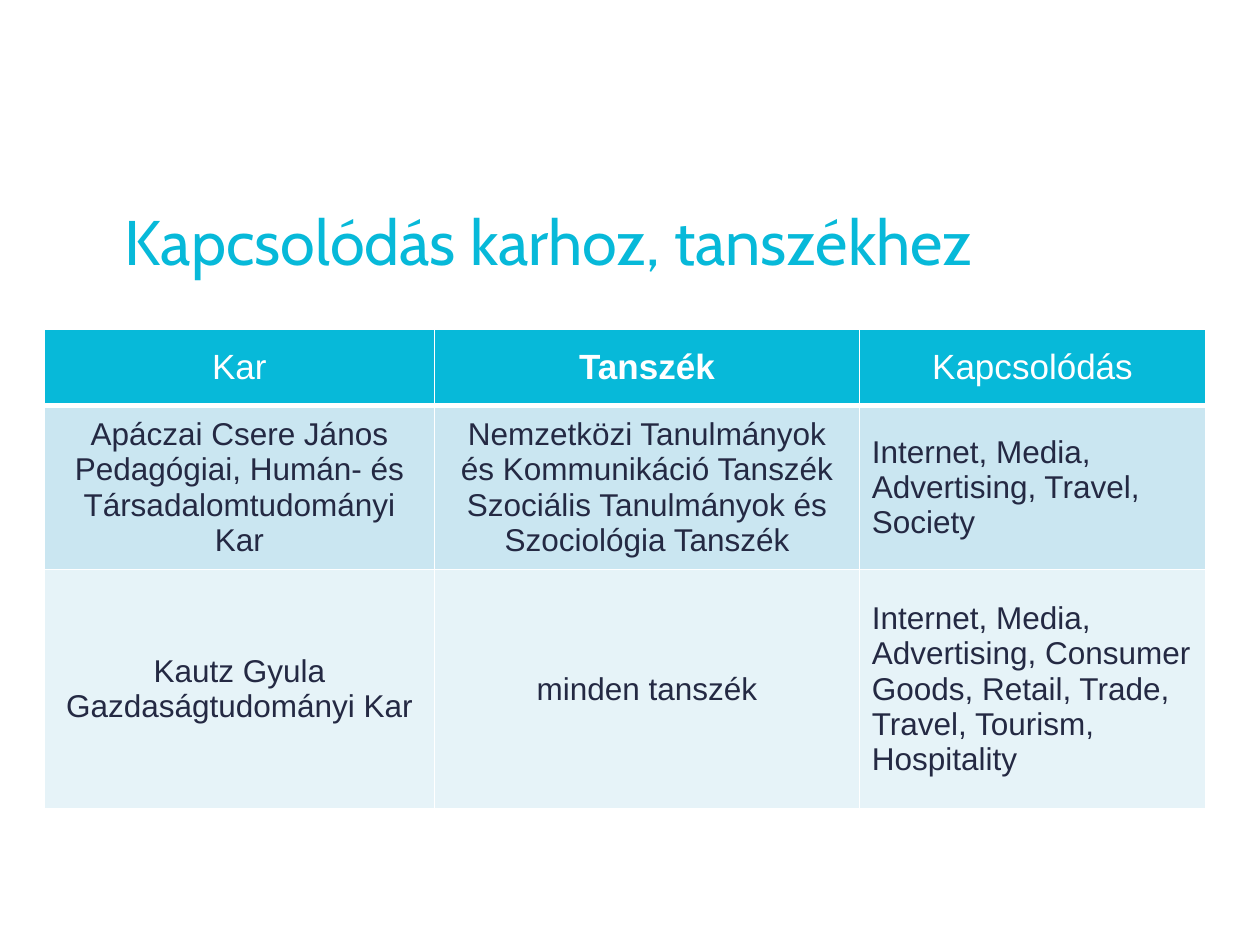
from pptx import Presentation
from pptx.dml.color import RGBColor
from pptx.enum.text import MSO_ANCHOR, PP_ALIGN
from pptx.oxml import parse_xml
from pptx.oxml.ns import nsdecls
from pptx.util import Inches, Pt

MIDDLE = MSO_ANCHOR.MIDDLE
LEFT, CENTER = PP_ALIGN.LEFT, PP_ALIGN.CENTER
CYAN = RGBColor(0x07, 0xB9, 0xD9)
PALE = RGBColor(0xCA, 0xE6, 0xF1)
LIGHT = RGBColor(0xE6, 0xF3, 0xF8)
NAVY = RGBColor(0x24, 0x29, 0x43)
WHITE = RGBColor(0xFF, 0xFF, 0xFF)

WIDTHS = (3.1, 3.37, 2.75)
HEIGHTS = (0.61, 1.3, 1.9)
FILLS = (CYAN, PALE, LIGHT)
ROWS = (
    ("Kar", "Tanszék", "Kapcsolódás"),
    (
        "Apáczai Csere János Pedagógiai, Humán- és Társadalomtudományi Kar",
        "Nemzetközi Tanulmányok és Kommunikáció Tanszék\n"
        "Szociális Tanulmányok és Szociológia Tanszék",
        "Internet, Media, Advertising, Travel, Society",
    ),
    (
        "Kautz Gyula Gazdaságtudományi Kar",
        "minden tanszék",
        "Internet, Media, Advertising, Consumer Goods, Retail, Trade, "
        "Travel, Tourism, Hospitality",
    ),
)


class Deck:
    """Holds the style and the current slide."""

    def __init__(self):
        self.show = Presentation()
        self.show.slide_width = Inches(10)
        self.show.slide_height = Inches(7.5)
        self.slide = self.show.slides.add_slide(self.show.slide_layouts[6])

    def style(self, frame, face, size, color, align=LEFT, bold=False):
        for para in frame.paragraphs:
            para.alignment = align
            for run in para.runs:
                font = run.font
                font.name, font.size, font.bold = face, Pt(size), bold
                font.color.rgb = color

    def title(self, text, left, top, width, height):
        box = self.slide.shapes.add_textbox(
            Inches(left), Inches(top), Inches(width), Inches(height))
        frame = box.text_frame
        frame.word_wrap = True
        frame.text = text
        frame.paragraphs[0].line_spacing = 0.9
        self.style(frame, "Cabin", 36, CYAN)

    def border(self, cell, head, below):
        props = cell._tc.get_or_add_tcPr()
        sides = {"L": 1, "R": 1, "T": 3 if below else 1, "B": 3 if head else 1}
        for spot, (side, width) in enumerate(sides.items()):
            props.insert(spot, parse_xml(
                f'<a:ln{side} {nsdecls("a")} w="{Pt(width)}"><a:solidFill>'
                f'<a:srgbClr val="{WHITE}"/></a:solidFill></a:ln{side}>'))

    def table(self, left, top):
        grid = self.slide.shapes.add_table(
            len(ROWS), len(WIDTHS), Inches(left), Inches(top),
            Inches(sum(WIDTHS)), Inches(sum(HEIGHTS))).table
        for col, width in zip(grid.columns, WIDTHS):
            col.width = Inches(width)
        for r, texts in enumerate(ROWS):
            grid.rows[r].height = Inches(HEIGHTS[r])
            head = r == 0
            for c, text in enumerate(texts):
                cell = grid.cell(r, c)
                cell.text_frame.text = text
                cell.vertical_anchor = MIDDLE
                cell.fill.solid()
                cell.fill.fore_color.rgb = FILLS[r]
                self.border(cell, head, r == 1)
                self.style(
                    cell.text_frame, "Arial", 20 if head else 18,
                    WHITE if head else NAVY,
                    CENTER if head or c < 2 else LEFT, head and c == 1)


def main():
    deck = Deck()
    deck.table(0.35, 2.61)
    deck.title("Kapcsolódás karhoz, tanszékhez", 0.89, 1.63, 8.36, 0.6)
    deck.show.save("out.pptx")


if __name__ == "__main__":
    main()
